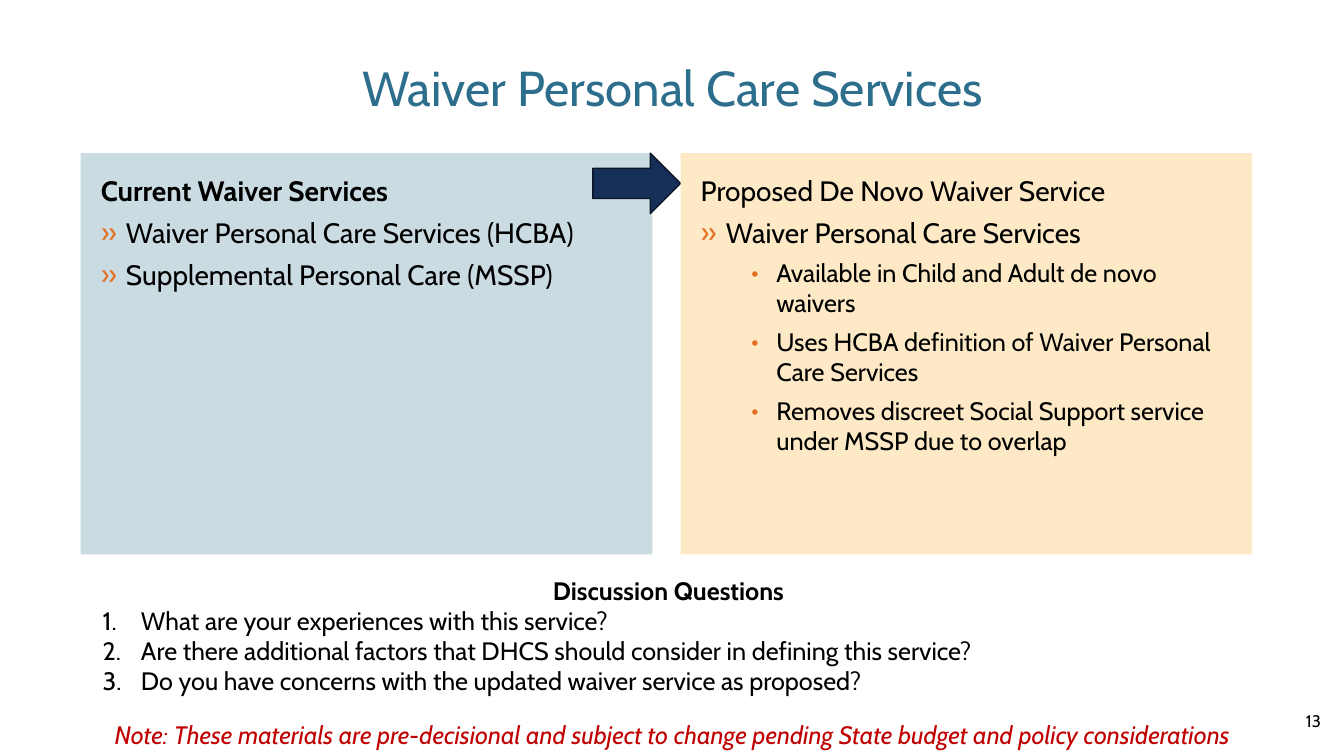
from lxml.etree import SubElement
from pptx import Presentation
from pptx.dml.color import RGBColor
from pptx.enum.shapes import MSO_SHAPE as Shape
from pptx.enum.text import MSO_ANCHOR as Anchor, PP_ALIGN as Align
from pptx.oxml.ns import qn
from pptx.util import Inches, Pt

FONT = "Cabin"
COLORS = {
    "title": "2D6E8D", "text": "000000", "note": "C00000", "bullet": "E37124",
    "current": "CADBE2", "proposed": "FDE9C6", "arrow": "173059",
    "arrow_line": "0A1527", "white": "FFFFFF",
}
MARKS = {"item": ("»", 0.25), "detail": ("•", 0.75)}


def color(name):
    return RGBColor.from_string(COLORS[name])


def place(box):
    return [Inches(length) for length in box]


def add_block(slide, box, fill, shape=Shape.RECTANGLE):
    block = slide.shapes.add_shape(shape, *place(box))
    block.shadow.inherit = False
    block.fill.solid()
    block.fill.fore_color.rgb = color(fill)
    block.line.fill.background()
    return block


def set_indent(paragraph, left, hanging):
    properties = paragraph._p.get_or_add_pPr()
    properties.set("marL", str(Inches(left)))
    properties.set("indent", str(-Inches(hanging)))
    return properties


def add_bullet(paragraph, mark, left):
    properties = set_indent(paragraph, left, 0.25)
    tint = SubElement(properties, qn("a:buClr"))
    SubElement(tint, qn("a:srgbClr"), val=COLORS["bullet"])
    SubElement(properties, qn("a:buFont"), typeface=FONT)
    SubElement(properties, qn("a:buChar"), char=mark)


def add_number(paragraph):
    properties = set_indent(paragraph, 0.38, 0.38)
    SubElement(properties, qn("a:buFont"), typeface=FONT)
    SubElement(properties, qn("a:buAutoNum"), type="arabicPeriod")


def write(paragraph, text, size, tint="text", align=Align.LEFT, bold=False, italic=False):
    paragraph.text = text
    paragraph.alignment = align
    font = paragraph.font
    font.name, font.size = FONT, Pt(size)
    font.bold, font.italic = bold, italic
    font.color.rgb = color(tint)


def next_paragraph(frame, index):
    return frame.add_paragraph() if index else frame.paragraphs[0]


def add_line(slide, box, text, size, anchor=Anchor.MIDDLE, **style):
    frame = slide.shapes.add_textbox(*place(box)).text_frame
    frame.word_wrap = True
    frame.vertical_anchor = anchor
    write(frame.paragraphs[0], text, size, **style)


def add_panel(slide, box, fill, heading, entries, bold_heading=False):
    frame = add_block(slide, box, fill).text_frame
    frame.word_wrap = True
    frame.vertical_anchor = Anchor.TOP
    frame.margin_left = frame.margin_top = frame.margin_right = Inches(0.2)
    for index, (level, text) in enumerate([("heading", heading), *entries]):
        paragraph = next_paragraph(frame, index)
        if level in MARKS:
            add_bullet(paragraph, *MARKS[level])
        if level == "detail":
            paragraph.level = 1
        write(paragraph, text, 18 if level == "detail" else 20,
              bold=bold_heading and level == "heading")
        paragraph.space_after = Pt(6)


def add_comparison(slide, box):
    left, top, width, height = box
    panel_width, arrow_width = 5.67, 0.87
    proposed_left = left + width - panel_width
    add_panel(slide, (left, top, panel_width, height), "current",
              "Current Waiver Services", [
                  ("item", "Waiver Personal Care Services (HCBA)"),
                  ("item", "Supplemental Personal Care (MSSP)"),
              ], bold_heading=True)
    arrow = add_block(slide, (proposed_left - arrow_width, top, arrow_width, 0.6),
                      "arrow", Shape.RIGHT_ARROW)
    arrow.line.color.rgb = color("arrow_line")
    arrow.line.width = Pt(1)
    add_panel(slide, (proposed_left, top, panel_width, height), "proposed",
              "Proposed De Novo Waiver Service", [
                  ("item", "Waiver Personal Care Services"),
                  ("detail", "Available in Child and Adult de novo waivers"),
                  ("detail", "Uses HCBA definition of Waiver Personal Care Services"),
                  ("detail", "Removes discreet Social Support service under MSSP due to overlap"),
              ])


def add_discussion(slide, box, heading, questions):
    frame = add_block(slide, box, "white").text_frame
    frame.word_wrap = True
    frame.vertical_anchor = Anchor.MIDDLE
    write(frame.paragraphs[0], heading, 18, align=Align.CENTER, bold=True)
    for question in questions:
        paragraph = frame.add_paragraph()
        add_number(paragraph)
        write(paragraph, question, 18)


def add_footer(slide, box):
    left, top, width, height = box
    add_line(slide, (left, top + 0.14, width, 0.28),
             "Note: These materials are pre-decisional and subject to change "
             "pending State budget and policy considerations",
             18, Anchor.TOP, tint="note", align=Align.CENTER, italic=True)
    add_line(slide, (left + width - 3, top, 3, height), "13", 12, align=Align.RIGHT)


def main():
    deck = Presentation()
    deck.slide_width, deck.slide_height = Inches(13.33), Inches(7.5)
    slide = deck.slides.add_slide(deck.slide_layouts[6])
    add_line(slide, (0.92, 0.4, 11.5, 0.92), "Waiver Personal Care Services", 35,
             tint="title", align=Align.CENTER)
    add_comparison(slide, (0.8, 1.52, 11.62, 3.98))
    add_discussion(slide, (0.92, 5.66, 11.42, 1.29), "Discussion Questions", [
        "What are your experiences with this service?",
        "Are there additional factors that DHCS should consider in defining this service?",
        "Do you have concerns with the updated waiver service as proposed?",
    ])
    add_footer(slide, (0.14, 6.95, 13.06, 0.4))
    deck.save("out.pptx")


if __name__ == "__main__":
    main()
